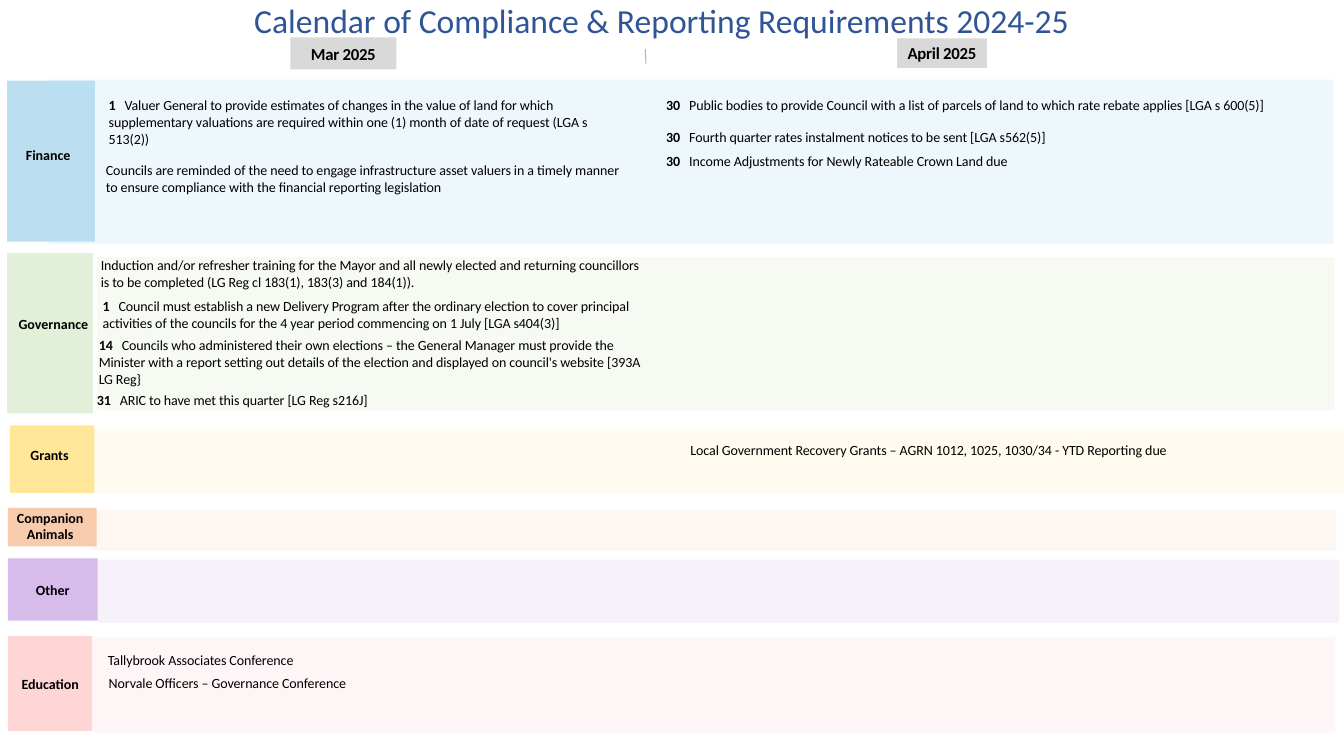
from dataclasses import dataclass

from lxml import etree
from pptx import Presentation
from pptx.dml.color import RGBColor
from pptx.enum.shapes import MSO_CONNECTOR, MSO_SHAPE
from pptx.enum.text import MSO_ANCHOR, MSO_AUTO_SIZE, PP_ALIGN
from pptx.oxml.ns import qn
from pptx.util import Cm, Pt

RECTANGLE = MSO_SHAPE.RECTANGLE
STRAIGHT = MSO_CONNECTOR.STRAIGHT
LEFT, CENTER = PP_ALIGN.LEFT, PP_ALIGN.CENTER
TOP, MIDDLE = MSO_ANCHOR.TOP, MSO_ANCHOR.MIDDLE
NO_AUTOFIT = MSO_AUTO_SIZE.NONE
TITLE_ONLY_LAYOUT = 5


@dataclass(frozen=True)
class Theme:
    font: str = "Calibri"
    ink: str = "000000"
    title: str = "2F5597"
    month: str = "D9D9D9"
    title_size: int = 24
    month_size: int = 12
    body_size: int = 10
    body_spacing: float = -0.07
    month_spacing: float = -0.2
    band_opacity: int = 20
    divider_opacity: int = 30


@dataclass(frozen=True)
class Entry:
    """A requirement; left and top are centimetres from the category tab."""
    left: float
    top: float
    width: float
    height: float
    text: str
    day: str = ""


@dataclass(frozen=True)
class Category:
    """Boxes are (left, top, width, height) in cm; label_box is relative to tab."""
    name: str
    tab: tuple
    tab_color: str
    band: tuple
    band_color: str
    label_box: tuple = ()
    entries: tuple = ()


THEME = Theme()

MONTHS = (
    ("Mar 2025", (7.32, 0.94, 2.67, 0.81)),
    ("April 2025", (22.61, 0.97, 2.26, 0.74)),
)

CATEGORIES = (
    Category("Finance", (0.18, 2.03, 2.21, 4.06), "BBDEF0",
             (1.22, 2.01, 32.39, 4.14), "ADD8ED", (-0.31, 1.63, 2.69, 0.51), (
        Entry(2.56, 0.41, 12.85, 1.27,
              "Valuer General to provide estimates of changes in the value of land for which "
              "supplementary valuations are required within one (1) month of date of request "
              "(LGA s 513(2))", "1"),
        Entry(2.49, 2.03, 12.95, 0.86,
              "Councils are reminded of the need to engage infrastructure asset valuers in a "
              "timely manner to ensure compliance with the financial reporting legislation"),
        Entry(16.61, 0.41, 15.72, 0.43,
              "Public bodies to provide Council with a list of parcels of land to which rate "
              "rebate applies [LGA s 600(5)]", "30"),
        Entry(16.61, 1.2, 14.48, 0.43,
              "Fourth quarter rates instalment notices to be sent [LGA s562(5)]", "30"),
        Entry(16.61, 1.81, 9.37, 0.43,
              "Income Adjustments for Newly Rateable Crown Land due", "30"),
    )),
    Category("Governance", (0.18, 6.38, 2.16, 4.04), "E2F0D9",
             (2.44, 6.48, 31.19, 3.86), "D3E8C6", (-0.18, 1.52, 2.69, 0.51), (
        Entry(2.36, 0.07, 13.6, 0.86,
              "Induction and/or refresher training for the Mayor and all newly elected and "
              "returning councillors is to be completed (LG Reg cl 183(1), 183(3) and 184(1))."),
        Entry(2.41, 1.11, 14.05, 0.86,
              "Council must establish a new Delivery Program after the ordinary election to "
              "cover principal activities of the councils for the 4 year period commencing on "
              "1 July [LGA s404(3)]", "1"),
        Entry(2.31, 2.1, 14.05, 1.27,
              "Councils who administered their own elections – the General Manager must provide "
              "the Minister with a report setting out details of the election and displayed on "
              "council's website [393A LG Reg}", "14"),
        Entry(2.26, 3.48, 14.88, 0.43,
              "ARIC to have met this quarter [LG Reg s216J]", "31"),
    )),
    Category("Grants", (0.25, 10.72, 2.13, 1.7), "FFE699",
             (1.5, 10.8, 32.39, 1.65), "FFECB7", (-0.12, 0.51, 2.24, 0.46), (
        Entry(17.15, 0.41, 15.47, 0.43,
              "Local Government Recovery Grants – AGRN 1012, 1025, 1030/34 - YTD Reporting due"),
    )),
    Category("Companion Animals", (0.2, 12.8, 2.24, 0.97), "F8CBAD",
             (2.31, 12.85, 31.37, 1.02), "F9D5BD", (-0.28, 0.1, 2.69, 0.71)),
    Category("Other", (0.2, 14.07, 2.26, 1.57), "D6BBEB",
             (2.46, 14.1, 31.29, 1.6), "D7BCEA"),
    Category("Education", (0.2, 16.03, 2.13, 2.39), "FED6D6",
             (2.36, 16.05, 31.29, 2.41), "FED6D6", (), (
        Entry(2.52, 0.23, 7.16, 0.74, "Tallybrook Associates Conference"),
        Entry(2.54, 0.86, 8.28, 0.66, "Norvale Officers – Governance Conference"),
    )),
)


def lengths(box):
    return [Cm(value) for value in box]


def set_opacity(properties, percent):
    color = properties.find(".//" + qn("a:srgbClr"))
    etree.SubElement(color, qn("a:alpha"), val=str(percent * 1000))


def write_text(shape, text, *, day="", size=THEME.body_size, color=THEME.ink, bold=False,
               spacing=0, align=LEFT, anchor=MIDDLE, margin=0.0, wrap=True):
    """Fill a shape with one paragraph, led by a bold day and a tab if a day is given."""
    frame = shape.text_frame
    frame.word_wrap = wrap
    frame.auto_size = NO_AUTOFIT
    frame.vertical_anchor = anchor
    frame.margin_left = frame.margin_right = Cm(margin)
    frame.margin_top = frame.margin_bottom = Cm(margin / 2)
    paragraph = frame.paragraphs[0]
    paragraph.alignment = align
    pieces = [(text, bold)]
    if day:
        pieces = [(day + "\t", True), (text, bold)]
        stops = etree.SubElement(paragraph._p.get_or_add_pPr(), qn("a:tabLst"))
        gap = Cm(0.4 if len(day) == 1 else 0.58)
        etree.SubElement(stops, qn("a:tab"), pos=str(gap), algn="l")
    for words, heavy in pieces:
        run = paragraph.add_run()
        run.text = words
        run.font.name = THEME.font
        run.font.size = Pt(size)
        run.font.bold = heavy
        run.font.color.rgb = RGBColor.from_string(color)
        if spacing:
            run._r.get_or_add_rPr().set("spc", str(round(spacing * 100)))


def add_block(slide, box, color, opacity=100):
    block = slide.shapes.add_shape(RECTANGLE, *lengths(box))
    block.shadow.inherit = False
    block.fill.solid()
    block.fill.fore_color.rgb = RGBColor.from_string(color)
    block.line.fill.background()
    if opacity < 100:
        set_opacity(block._element.spPr, opacity)
    return block


def add_header(slide, box):
    """Place the title in the box, then the months and the divider between them."""
    title = slide.shapes.title
    title.left, title.top, title.width, title.height = lengths(box)
    write_text(title, "Calendar of Compliance & Reporting Requirements 2024-25",
               size=THEME.title_size, color=THEME.title, align=CENTER, anchor=TOP, margin=0.25)
    for month, month_box in MONTHS:
        write_text(add_block(slide, month_box, THEME.month), month, size=THEME.month_size,
                   bold=True, spacing=THEME.month_spacing, align=CENTER, wrap=False)
    divider = slide.shapes.add_connector(STRAIGHT, *lengths((16.26, 1.24, 16.28, 1.6)))
    divider.line.color.rgb = RGBColor.from_string(THEME.ink)
    divider.line.width = Pt(0.75)
    properties = divider._element.spPr
    set_opacity(properties, THEME.divider_opacity)
    etree.SubElement(properties, qn("a:effectLst"))


def add_category(slide, category):
    """Draw the pale band, the coloured tab with its label, and the entries."""
    add_block(slide, category.band, category.band_color, THEME.band_opacity)
    label = add_block(slide, category.tab, category.tab_color)
    left, top = category.tab[:2]
    margin = 0.25
    if category.label_box:
        dx, dy, width, height = category.label_box
        label = slide.shapes.add_textbox(*lengths((left + dx, top + dy, width, height)))
        margin = 0
    write_text(label, category.name, bold=True, align=CENTER, margin=margin)
    for entry in category.entries:
        box = (left + entry.left, top + entry.top, entry.width, entry.height)
        write_text(slide.shapes.add_textbox(*lengths(box)), entry.text, day=entry.day,
                   spacing=THEME.body_spacing)


def main():
    deck = Presentation()
    deck.slide_width, deck.slide_height = Cm(33.87), Cm(19.05)
    slide = deck.slides.add_slide(deck.slide_layouts[TITLE_ONLY_LAYOUT])
    add_header(slide, (5.79, -0.13, 21.77, 1.27))
    for category in CATEGORIES:
        add_category(slide, category)
    deck.save("out.pptx")


if __name__ == "__main__":
    main()
